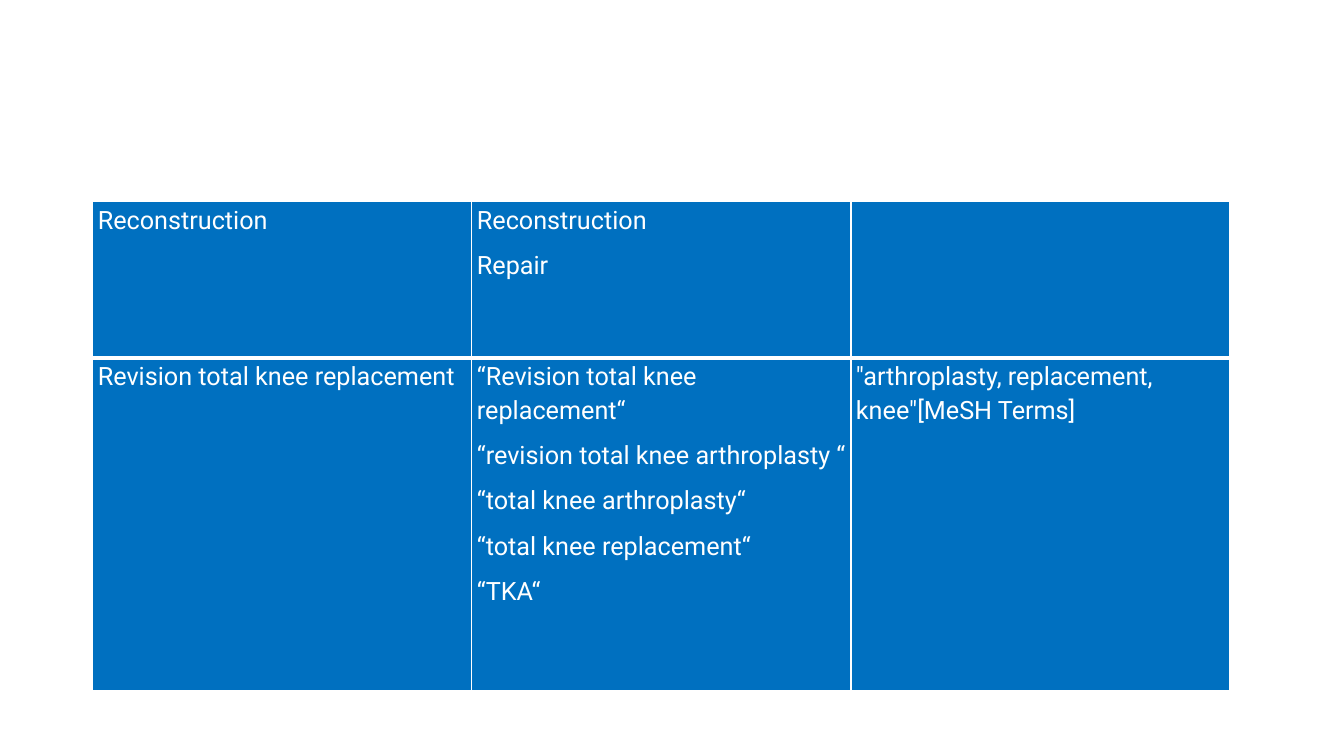
from lxml import etree
from pptx import Presentation
from pptx import util as u
from pptx.dml.color import RGBColor
from pptx.oxml.ns import qn

COLOURS = {"cell": "0070C0", "text": "FFFFFF", "border": "FFFFFF"}
WIDTH, HEIGHT = u.Inches(13.33), u.Inches(7.5)
COLUMN_WIDTH = u.Inches(3.76)
ROW_HEIGHTS = [u.Inches(1.55), u.Inches(3.3)]
SEARCH_TERMS = [
    [["Reconstruction"], ["Reconstruction", "Repair"], []],
    [
        ["Revision total knee replacement"],
        [
            "“Revision total knee replacement“",
            "“revision total knee arthroplasty “",
            "“total knee arthroplasty“",
            "“total knee replacement“",
            "“TKA“",
        ],
        ['"arthroplasty, replacement, knee"[MeSH Terms]'],
    ],
]


def add_border(cell, side, points):
    properties = cell._tc.get_or_add_tcPr()
    line = etree.SubElement(properties, qn(f"a:ln{side}"), w=str(u.Pt(points)))
    fill = etree.SubElement(line, qn("a:solidFill"))
    etree.SubElement(fill, qn("a:srgbClr"), val=COLOURS["border"])


def write_paragraph(para, words, size=18, font="Roboto", colour="text"):
    para.line_spacing = 1.15
    para.space_after = u.Pt(8)
    span = para.add_run()
    span.text = words
    span.font.size = u.Pt(size)
    span.font.name = font
    span.font.color.rgb = RGBColor.from_string(COLOURS[colour])


def format_cell(cell, lines, bottom):
    cell.margin_left = cell.margin_right = u.Inches(0.05)
    cell.margin_top = cell.margin_bottom = 0
    for side, points in zip("LRTB", (1, 1, 1, bottom)):
        add_border(cell, side, points)
    cell.fill.solid()
    cell.fill.fore_color.rgb = RGBColor.from_string(COLOURS["cell"])
    frame = cell.text_frame
    for index, words in enumerate(lines):
        para = frame.add_paragraph() if index else frame.paragraphs[0]
        write_paragraph(para, words)


def add_terms_table(page, rows):
    columns = len(rows[0])
    table = page.shapes.add_table(
        len(rows), columns, u.Inches(0.92), u.Inches(2),
        COLUMN_WIDTH * columns, sum(ROW_HEIGHTS),
    ).table
    table.horz_banding = False
    table.first_row = False
    for column in table.columns:
        column.width = COLUMN_WIDTH
    for number, lines_by_cell in enumerate(rows):
        table.rows[number].height = ROW_HEIGHTS[number]
        for cell, lines in zip(table.rows[number].cells, lines_by_cell):
            format_cell(cell, lines, bottom=1 if number else 3)


def main():
    deck = Presentation()
    deck.slide_width, deck.slide_height = WIDTH, HEIGHT
    page = deck.slides.add_slide(deck.slide_layouts[6])
    add_terms_table(page, SEARCH_TERMS)
    deck.save("out.pptx")


if __name__ == "__main__":
    main()
